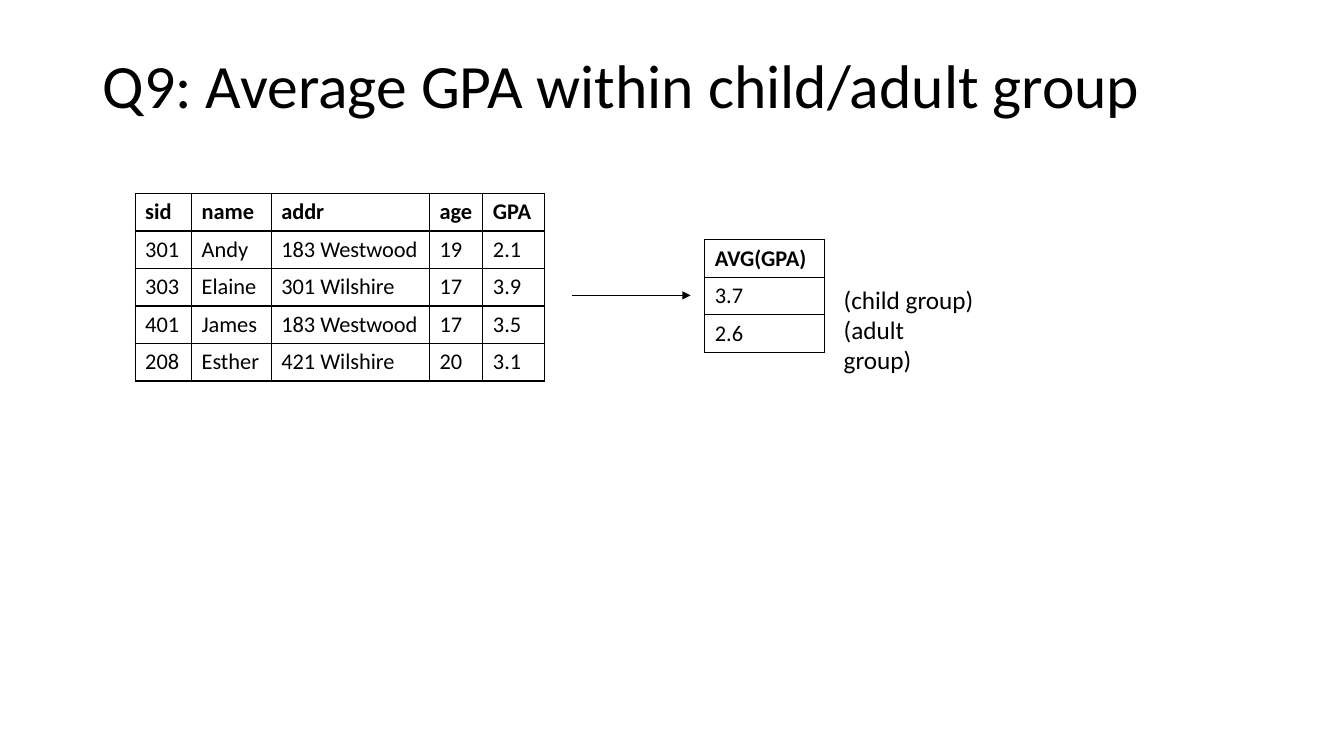
"""Build the slide on average GPA within the child and adult groups."""
from dataclasses import dataclass

from lxml import etree
from pptx import Presentation
from pptx.dml.color import RGBColor
from pptx.enum.shapes import MSO_CONNECTOR
from pptx.enum.text import MSO_ANCHOR, MSO_AUTO_SIZE, PP_ALIGN
from pptx.oxml.ns import qn
from pptx.util import Inches, Pt

STRAIGHT = MSO_CONNECTOR.STRAIGHT
MIDDLE = MSO_ANCHOR.MIDDLE
NO_FIT = MSO_AUTO_SIZE.NONE
LEFT = PP_ALIGN.LEFT

FONT = "Calibri"
COLORS = {"ink": "000000"}
ROW_HEIGHT = 0.37


@dataclass(frozen=True)
class Relation:
    left: float
    top: float
    widths: tuple[float, ...]
    rows: tuple[tuple[str, ...], ...]


RELATIONS = (
    Relation(1.34, 1.92, (0.56, 0.79, 1.57, 0.53, 0.61), (
        ("sid", "name", "addr", "age", "GPA"),
        ("301", "Andy", "183 Westwood", "19", "2.1"),
        ("303", "Elaine", "301 Wilshire", "17", "3.9"),
        ("401", "James", "183 Westwood", "17", "3.5"),
        ("208", "Esther", "421 Wilshire", "20", "3.1"),
    )),
    Relation(6.99, 2.38, (1.19,), (("AVG(GPA)",), ("3.7",), ("2.6",))),
)


def style_paragraph(p, size: float, bold: bool = False) -> None:
    p.alignment = LEFT
    p.font.name = FONT
    p.font.size = Pt(size)
    p.font.bold = bold
    p.font.color.rgb = RGBColor.from_string(COLORS["ink"])


def add_borders(cell) -> None:
    tc_pr = cell._tc.get_or_add_tcPr()
    for side in ("lnL", "lnR", "lnT", "lnB"):
        ln = etree.SubElement(tc_pr, qn(f"a:{side}"), w=str(Pt(1)))
        fill = etree.SubElement(ln, qn("a:solidFill"))
        etree.SubElement(fill, qn("a:srgbClr"), val=COLORS["ink"])


def add_relation(s, relation: Relation) -> None:
    table = s.shapes.add_table(
        len(relation.rows), len(relation.widths),
        Inches(relation.left), Inches(relation.top),
        Inches(sum(relation.widths)), Inches(ROW_HEIGHT * len(relation.rows)),
    ).table
    table.horz_banding = False
    for column, width in zip(table.columns, relation.widths):
        column.width = Inches(width)
    for i, row in enumerate(relation.rows):
        table.rows[i].height = Inches(ROW_HEIGHT)
        for j, text in enumerate(row):
            cell = table.cell(i, j)
            cell.text = text
            style_paragraph(cell.text_frame.paragraphs[0], 16, bold=i == 0)
            add_borders(cell)
            cell.fill.background()


def add_title(s, text: str) -> None:
    sp = s.shapes.title
    sp.left, sp.top = Inches(0.92), Inches(0.4)
    sp.width, sp.height = Inches(11.5), Inches(0.95)
    tf = sp.text_frame
    tf.text = text
    tf.auto_size = NO_FIT
    tf.vertical_anchor = MIDDLE
    p = tf.paragraphs[0]
    p.line_spacing = 0.9
    style_paragraph(p, 44)


def add_arrow(s, start: float, end: float, y: float) -> None:
    arrow = s.shapes.add_connector(
        STRAIGHT, Inches(start), Inches(y), Inches(end), Inches(y))
    arrow.line.width = Pt(0.5)
    arrow.line.color.rgb = RGBColor.from_string(COLORS["ink"])
    etree.SubElement(arrow.line._get_or_add_ln(), qn("a:tailEnd"), type="triangle")
    etree.SubElement(arrow._element.spPr, qn("a:effectLst"))


def add_group_labels(s, labels: tuple[str, ...]) -> None:
    sp = s.shapes.add_textbox(Inches(8.27), Inches(2.77), Inches(1.5), Inches(0.71))
    tf = sp.text_frame
    tf.word_wrap = True
    tf.text = "\n".join(labels)
    for p in tf.paragraphs:
        style_paragraph(p, 18)


def main() -> None:
    prs = Presentation()
    prs.slide_width, prs.slide_height = Inches(13.33), Inches(7.5)
    s = prs.slides.add_slide(prs.slide_layouts[5])
    add_title(s, "Q9: Average GPA within child/adult group")
    for relation in RELATIONS:
        add_relation(s, relation)
    add_arrow(s, 5.67, 6.85, 2.93)
    add_group_labels(s, ("(child group)", "(adult group)"))
    prs.save("out.pptx")


if __name__ == "__main__":
    main()
